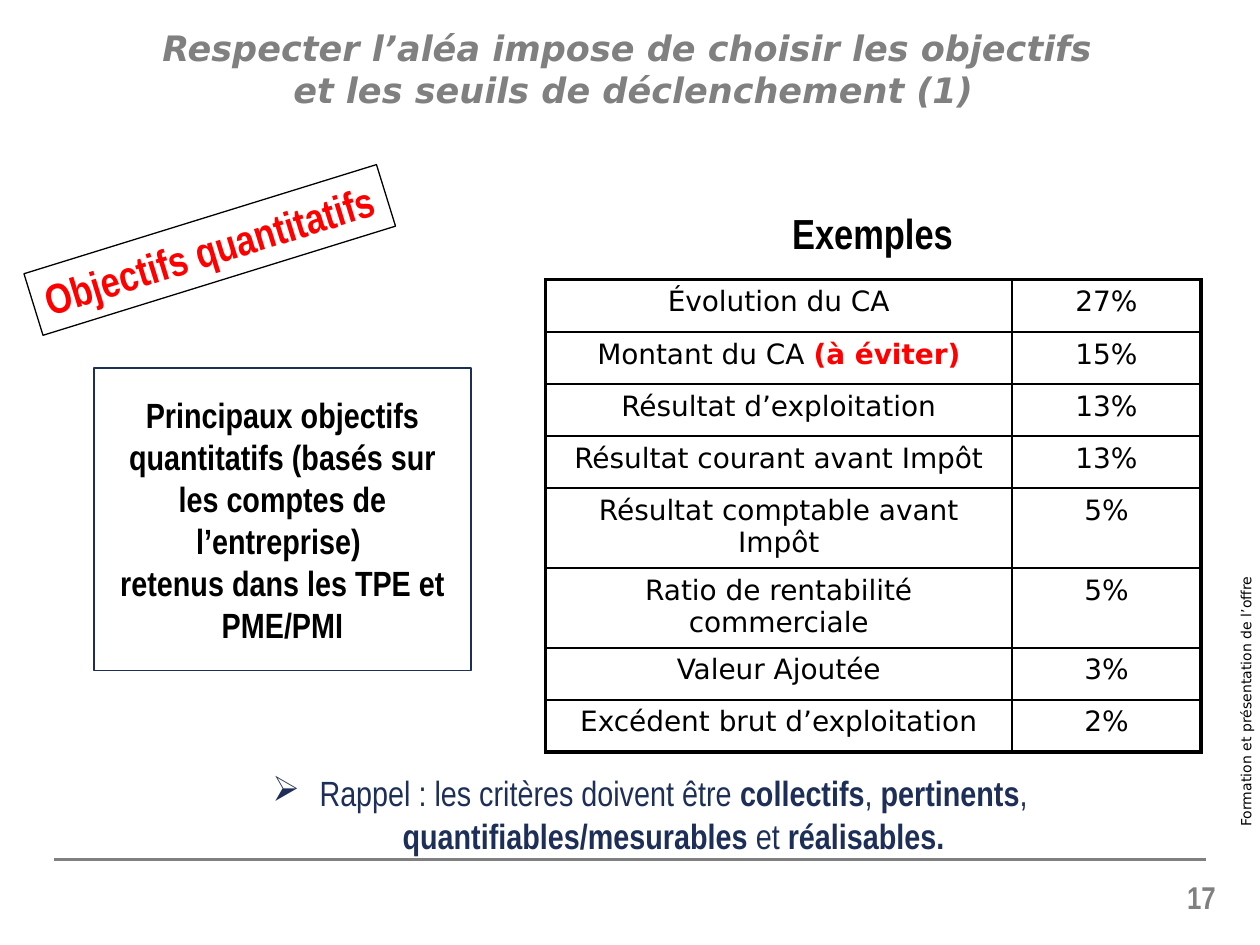
from lxml.etree import SubElement
from pptx import Presentation
from pptx.dml.color import RGBColor
from pptx.enum.shapes import MSO_CONNECTOR, MSO_SHAPE
from pptx.enum.text import MSO_ANCHOR, MSO_AUTO_SIZE, PP_ALIGN
from pptx.oxml.ns import qn
from pptx.util import Cm, Pt

COLORS = {"ink": "000000", "grey": "808080", "navy": "1D2E58",
          "red": "FF0000", "paper": "FFFFFF"}
NARROW, SANS = "Arial Narrow", "DejaVu Sans"
EXAMPLES = [
    ("Évolution du CA", "27%"),
    ("Montant du CA ", "15%"),
    ("Résultat d’exploitation", "13%"),
    ("Résultat courant avant Impôt", "13%"),
    ("Résultat comptable avant Impôt", "5%"),
    ("Ratio de rentabilité commerciale", "5%"),
    ("Valeur Ajoutée", "3%"),
    ("Excédent brut d’exploitation", "2%"),
]
WARNINGS = {"Montant du CA ": "(à éviter)"}


def rgb(name):
    return RGBColor.from_string(COLORS[name])


def set_font(paragraph, face, size, color, align=PP_ALIGN.LEFT, bold=None, italic=None):
    paragraph.alignment = align
    font = paragraph.font
    font.name, font.size, font.bold, font.italic = face, Pt(size), bold, italic
    font.color.rgb = rgb(color)


def add_label(slide, box, text, face, size, color, align=PP_ALIGN.LEFT,
              wrap=True, **style):
    """Add a text box of one paragraph; each newline becomes a line break."""
    label = slide.shapes.add_textbox(*map(Cm, box))
    label.text_frame.word_wrap = wrap
    paragraph = label.text_frame.paragraphs[0]
    paragraph.text = text.replace("\n", "\v")
    set_font(paragraph, face, size, color, align, **style)
    return label


def add_panel(slide, box, border, width):
    panel = slide.shapes.add_shape(MSO_SHAPE.RECTANGLE, *map(Cm, box))
    panel.shadow.inherit = False
    panel.fill.solid()
    panel.fill.fore_color.rgb = rgb("paper")
    panel.line.color.rgb = rgb(border)
    panel.line.width = Pt(width)
    return panel


def add_title(slide, box):
    add_label(slide, box, "Respecter l’aléa impose de choisir les objectifs \n"
              "et les seuils de déclenchement (1)", SANS, 20, "grey",
              PP_ALIGN.CENTER, bold=True, italic=True)


def add_tilted_tag(slide, box):
    tag = add_panel(slide, box, "ink", 0.75)
    tag.rotation = 342.8
    tint = tag.fill._xPr.find(qn("a:solidFill"))[0]
    SubElement(tint, qn("a:alpha"), val="80000")
    frame = tag.text_frame
    frame.word_wrap = False
    frame.auto_size = MSO_AUTO_SIZE.SHAPE_TO_FIT_TEXT
    frame.vertical_anchor = MSO_ANCHOR.TOP
    frame.text = "Objectifs quantitatifs"
    set_font(frame.paragraphs[0], NARROW, 24, "red", bold=True)


def add_goals_panel(slide, box):
    frame = add_panel(slide, box, "navy", 1).text_frame
    frame.word_wrap = True
    frame.vertical_anchor = MSO_ANCHOR.MIDDLE
    frame.text = ("Principaux objectifs quantitatifs (basés sur les comptes "
                  "de l’entreprise) \nretenus dans les TPE et PME/PMI")
    for paragraph in frame.paragraphs:
        set_font(paragraph, NARROW, 20, "ink", PP_ALIGN.CENTER, bold=True)


def set_borders(cell, widths):
    properties = cell._tc.get_or_add_tcPr()
    for side, width in zip("LRTB", widths):
        line = SubElement(properties, qn(f"a:ln{side}"), w=str(Pt(width)))
        fill = SubElement(line, qn("a:solidFill"))
        SubElement(fill, qn("a:srgbClr"), val=COLORS["ink"])


def add_examples(slide, left, top, column_widths, row_height):
    """Add the table of examples, with a thick frame and thin inner rules."""
    add_label(slide, (left + 4.7, top - 1.58, 3.76, 1.27), "Exemples", NARROW, 24,
              "ink", PP_ALIGN.RIGHT, wrap=False, bold=True)
    row_count, column_count = len(EXAMPLES), len(column_widths)
    table = slide.shapes.add_table(
        row_count, column_count, Cm(left), Cm(top), Cm(sum(column_widths)),
        Cm(row_height * row_count)).table
    table.first_row = table.horz_banding = False
    for column, width in zip(table.columns, column_widths):
        column.width = Cm(width)
    for r, example in enumerate(EXAMPLES):
        for c, text in enumerate(example):
            cell = table.cell(r, c)
            outer = (c == 0, c == column_count - 1, r == 0, r == row_count - 1)
            set_borders(cell, [2.25 if edge else 1 for edge in outer])
            cell.fill.background()
            cell.text = text
            paragraph = cell.text_frame.paragraphs[0]
            set_font(paragraph, SANS, 16, "ink", PP_ALIGN.CENTER)
            if text in WARNINGS:
                warning = paragraph.add_run()
                warning.text = WARNINGS[text]
                warning.font.bold = True
                warning.font.color.rgb = rgb("red")


def add_reminder(slide, box):
    reminder = slide.shapes.add_textbox(*map(Cm, box)).text_frame
    reminder.word_wrap = True
    reminder.vertical_anchor = MSO_ANCHOR.MIDDLE
    paragraph = reminder.paragraphs[0]
    properties = paragraph._p.get_or_add_pPr()
    properties.set("marL", str(Cm(0.95)))
    properties.set("indent", str(Cm(-0.95)))
    SubElement(properties, qn("a:buChar"), char="➢")
    set_font(paragraph, NARROW, 20, "navy", PP_ALIGN.CENTER)
    pieces = ["Rappel : les critères doivent être ", "collectifs", ", ", "pertinents",
              ", \n", "quantifiables/mesurables", " et ", "réalisables. "]
    for i, piece in enumerate(pieces):
        run = paragraph.add_run()
        run.text = piece.rstrip("\n")
        run.font.bold = i % 2 == 1
        if piece.endswith("\n"):
            paragraph.add_line_break()


def add_footer(slide, left, right, top):
    rule = slide.shapes.add_connector(
        MSO_CONNECTOR.STRAIGHT, Cm(left), Cm(top), Cm(right), Cm(top))
    rule.line.color.rgb = rgb("grey")
    rule.line.width = Pt(1.75)
    SubElement(rule._element.spPr, qn("a:effectLst"))
    add_label(slide, (right - 1.02, top + 0.26, 1.47, 1.27), "17", NARROW, 18,
              "grey", PP_ALIGN.RIGHT, bold=True)


def add_side_note(slide, box):
    note = add_label(slide, box, "Formation et présentation de l’offre", SANS, 8, "ink")
    note.rotation = 270


def main():
    deck = Presentation()
    deck.slide_width, deck.slide_height = Cm(25.4), Cm(19.05)
    slide = deck.slides.add_slide(deck.slide_layouts[6])
    add_footer(slide, 1.09, 24.31, 17.32)
    add_side_note(slide, (21.21, 12.73, 7.8, 0.58))
    add_title(slide, (1.02, 0.41, 23.5, 2.74))
    add_reminder(slide, (2.29, 15.29, 21.79, 2.24))
    add_examples(slide, 11, 5.64, (9.4, 3.81), 1.05)
    add_tilted_tag(slide, (0.51, 4.39, 7.44, 1.3))
    add_goals_panel(slide, (1.9, 7.42, 7.59, 6.1))
    deck.save("out.pptx")


if __name__ == "__main__":
    main()
